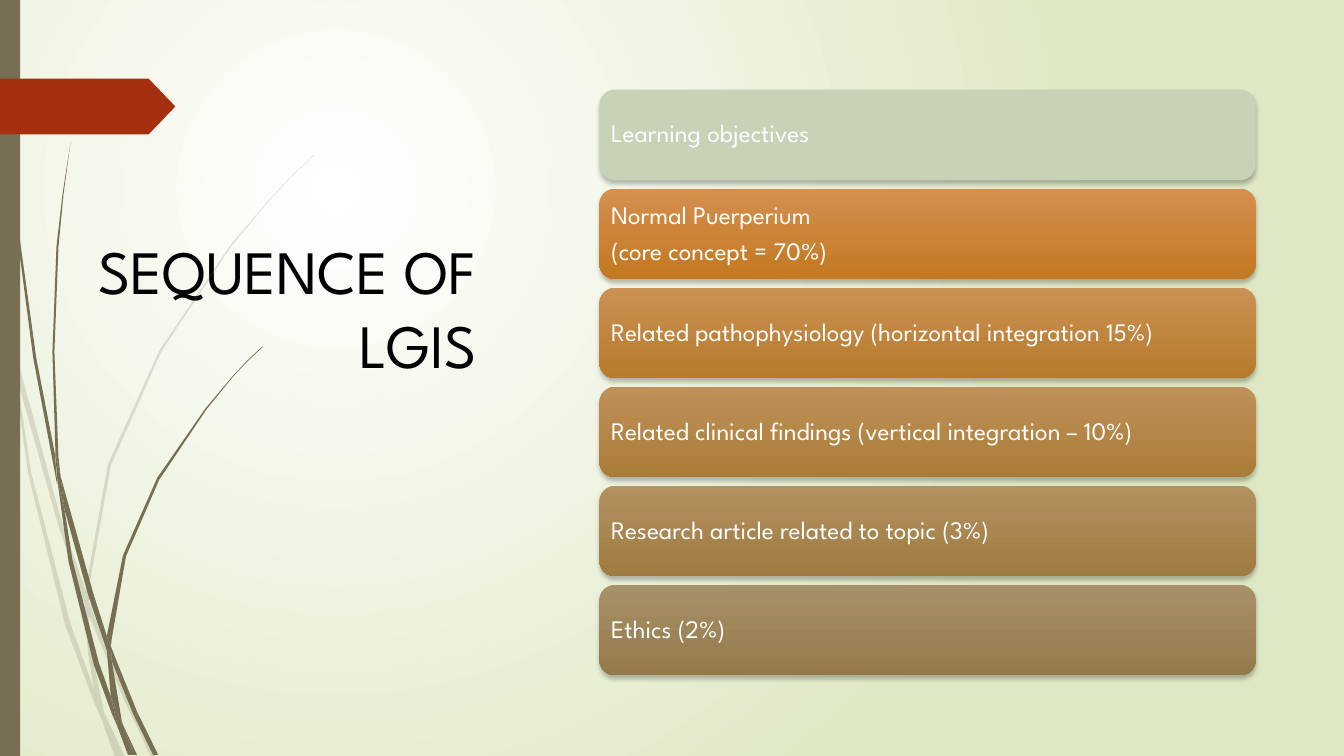
import pptx
import pptx.dml.color
import pptx.enum.shapes
import pptx.enum.text
import pptx.oxml
import pptx.oxml.ns
import pptx.util
import lxml.etree

Pt = pptx.util.Pt
qn = pptx.oxml.ns.qn
Shapes = pptx.enum.shapes.MSO_SHAPE

COLORS = {
    "white": "FFFFFF", "black": "000000", "meadow": "DFE8C4",
    "olive": "766F54", "red": "A53010", "sage": "C7D2B7",
}

# Blades of grass: corners on a grid of 0.72 points
GRASS_GRID = 0.72
PALE_BLADES = [
    [(11, 350), (9, 322), (0, 282), (0, 299), (10, 344)],
    [(58, 522), (84, 599), (85, 586), (62, 520), (14, 345), (17, 376)],
    [(92, 607), (88, 596), (88, 610), (123, 694), (150, 751), (155, 751), (127, 692)],
    [(119, 751), (124, 751), (105, 711)],
    [(93, 683), (70, 619), (31, 469), (17, 376), (11, 350), (28, 470), (65, 621),
     (92, 693), (101, 714), (99, 707)],
    [(84, 599), (87, 646), (93, 683), (96, 692), (105, 711), (103, 706), (91, 646),
     (88, 610), (88, 608)],
    [(88, 584), (110, 462), (160, 349), (229, 245), (268, 198), (290, 175), (312, 154),
     (312, 153), (289, 175), (268, 197), (228, 244), (158, 348), (107, 461), (85, 584),
     (85, 586), (88, 596)],
    [(101, 714), (114, 751), (119, 751)],
    [(88, 608), (88, 610), (88, 596), (85, 586), (84, 599)],
    [(96, 692), (93, 683), (99, 707), (101, 714), (119, 751), (105, 711)],
]
DARK_BLADES = [
    [(7, 110), (17, 233), (33, 355), (56, 477), (57, 481), (55, 457), (55, 453),
     (36, 355), (19, 232), (8, 109), (5, 48), (4, 0), (3, 0), (4, 48)],
    [(88, 592), (106, 645), (106, 633), (106, 631), (93, 590), (60, 472), (64, 505)],
    [(113, 649), (110, 641), (111, 656), (132, 708), (152, 749), (157, 749), (136, 706)],
    [(110, 691), (98, 657), (72, 556), (64, 505), (57, 477), (68, 557), (93, 659),
     (111, 708), (117, 722), (116, 717)],
    [(60, 472), (58, 453), (54, 349), (58, 245), (63, 193), (70, 141), (62, 193),
     (56, 245), (52, 349), (55, 449)],
    [(133, 749), (136, 749), (122, 719)],
    [(57, 477), (64, 505), (60, 472), (55, 449), (55, 453)],
    [(111, 633), (125, 552), (158, 476), (205, 406), (231, 374), (245, 359), (261, 344),
     (260, 344), (245, 358), (231, 373), (204, 405), (156, 474), (122, 551), (106, 631),
     (110, 641)],
    [(117, 722), (127, 749), (131, 749)],
    [(106, 645), (110, 691), (116, 706), (122, 719), (121, 716), (111, 656), (109, 651)],
    [(106, 645), (109, 651), (111, 656), (110, 641), (106, 631), (106, 633)],
    [(116, 706), (110, 691), (116, 717), (117, 722), (130, 749), (133, 749), (122, 719)],
]

# Steps: lines of text, top and bottom colour
STEPS = [
    (["Learning objectives"], None),
    (["Normal Puerperium", "(core concept = 70%)"], ("D58F4F", "C37921")),
    (["Related pathophysiology (horizontal integration 15%)"], ("CA9153", "B77B2C")),
    (["Related clinical findings (vertical integration – 10%)"], ("BE9159", "AB7C37")),
    (["Research article related to topic (3%)"], ("B39160", "A07B41")),
    (["Ethics (2%)"], ("A89068", "947A4B")),
]


def rgb(value):
    return pptx.dml.color.RGBColor.from_string(value)


class SlideWriter:
    font = "League Spartan"

    def __init__(self, slide):
        self.slide = slide

    def gradient(self, fill, first, last):
        fill.gradient()
        for stop, color, position in zip(fill.gradient_stops, (first, last), (0, 1)):
            stop.color.rgb = rgb(color)
            stop.position = position

    def background(self, centre, edge):
        self.gradient(self.slide.background.fill, centre, edge)
        gradient = self.slide.background._cSld.find(".//" + qn("a:gradFill"))
        linear = gradient.find(qn("a:lin"))
        radial = lxml.etree.SubElement(gradient, qn("a:path"), {"path": "circle"})
        lxml.etree.SubElement(radial, qn("a:fillToRect"), {
            "l": "50000", "t": "50000", "r": "100000", "b": "100000"})
        gradient.replace(linear, radial)

    def paint(self, shape, color, opacity=100):
        shape.shadow.inherit = False
        shape.line.fill.background()
        shape.fill.solid()
        shape.fill.fore_color.rgb = rgb(color)
        if opacity < 100:
            tint = shape._element.spPr.find(".//" + qn("a:srgbClr"))
            lxml.etree.SubElement(tint, qn("a:alpha"), {"val": str(opacity * 1000)})

    def shape(self, kind, left, top, width, height, color, corner=None):
        shape = self.slide.shapes.add_shape(kind, Pt(left), Pt(top), Pt(width), Pt(height))
        if corner is not None:
            shape.adjustments[0] = corner
        self.paint(shape, color)
        return shape

    def blade(self, corners, color, opacity):
        builder = self.slide.shapes.build_freeform(*corners[0], scale=Pt(GRASS_GRID))
        builder.add_line_segments(corners[1:], close=True)
        self.paint(builder.convert_to_shape(), color, opacity)

    def run(self, paragraph, text, size, color):
        run = paragraph.add_run()
        run.text = text
        run.font.name = self.font
        run.font.size = Pt(size)
        run.font.color.rgb = rgb(color)

    def title(self, text, left, top, width, height):
        title = self.slide.shapes.title
        title.left, title.top, title.width, title.height = map(Pt, (left, top, width, height))
        frame = title.text_frame
        frame.word_wrap = True
        frame.auto_size = pptx.enum.text.MSO_AUTO_SIZE.NONE
        frame.vertical_anchor = pptx.enum.text.MSO_ANCHOR.TOP
        paragraph = frame.paragraphs[0]
        paragraph.alignment = pptx.enum.text.PP_ALIGN.RIGHT
        self.run(paragraph, text, 44, COLORS["black"])

    def step(self, lines, gradient, left, top, width, height):
        shape = self.shape(Shapes.ROUNDED_RECTANGLE, left, top, width, height,
                           COLORS["sage"], 0.17)
        if gradient:
            self.gradient(shape.fill, *gradient)
            shape.fill.gradient_angle = 270
        # Soft shadow below the box
        effects = shape._element.spPr.find(qn("a:effectLst"))
        shadow = lxml.etree.SubElement(effects, qn("a:outerShdw"), {
            "blurRad": str(Pt(3)), "dist": str(Pt(2)), "dir": "5400000",
            "algn": "ctr", "rotWithShape": "0"})
        tint = lxml.etree.SubElement(shadow, qn("a:srgbClr"), {"val": COLORS["black"]})
        lxml.etree.SubElement(tint, qn("a:alpha"), {"val": "25000"})
        # Text
        frame = shape.text_frame
        frame.word_wrap = True
        frame.vertical_anchor = pptx.enum.text.MSO_ANCHOR.MIDDLE
        frame.margin_left = frame.margin_right = Pt(5.2)
        for index, line in enumerate(lines):
            paragraph = frame.add_paragraph() if index else frame.paragraphs[0]
            paragraph.alignment = pptx.enum.text.PP_ALIGN.LEFT
            paragraph.line_spacing = 0.9
            paragraph.space_after = Pt(6.3)
            self.run(paragraph, line, 18, COLORS["white"])


def main():
    presentation = pptx.Presentation()
    presentation.slide_width, presentation.slide_height = Pt(960), Pt(540)
    slide = presentation.slides.add_slide(presentation.slide_layouts[5])
    writer = SlideWriter(slide)

    # Backdrop
    writer.background(COLORS["white"], COLORS["meadow"])
    for blades, opacity in ((PALE_BLADES, 20), (DARK_BLADES, 100)):
        for corners in blades:
            writer.blade(corners, COLORS["olive"], opacity)
    writer.shape(Shapes.RECTANGLE, 0, 0, 14.4, 540, COLORS["olive"])
    writer.shape(Shapes.PENTAGON, 0, 56.2, 125.3, 39.8, COLORS["red"], 0.48)

    # Title and steps
    writer.title("SEQUENCE OF LGIS", 53.3, 162.7, 294.5, 208.8)
    for index, (lines, gradient) in enumerate(STEPS):
        writer.step(lines, gradient, 428.2, 64 + index * 70.75, 468.8, 64.6)

    presentation.save("out.pptx")


if __name__ == "__main__":
    main()
